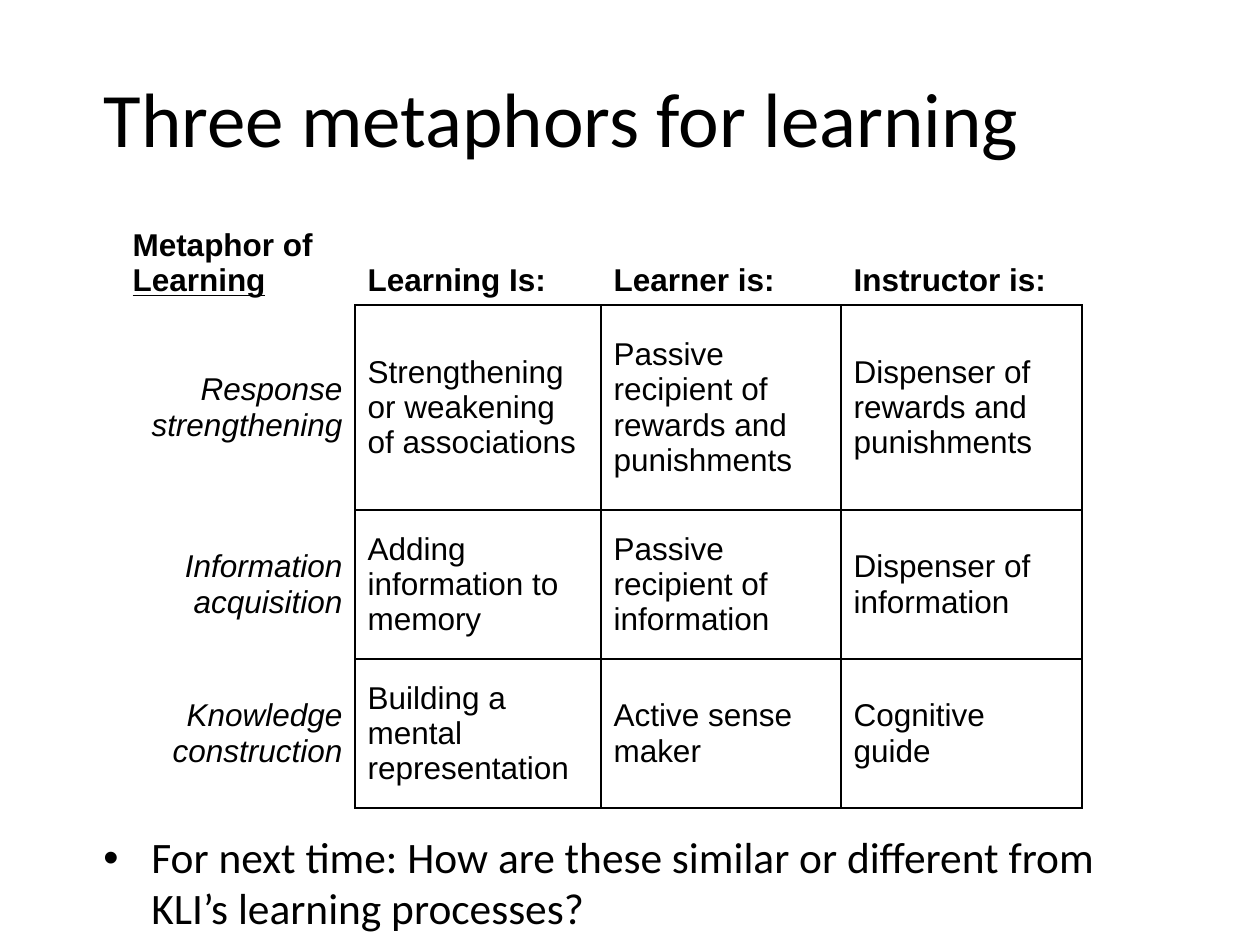
"""Build a slide with a table of three metaphors for learning and a closing question."""
import lxml.etree
import pptx
import pptx.dml.color
import pptx.enum.text
import pptx.oxml.ns
import pptx.util

PX = 914400 / 126
COLORS = {"ink": "000000"}
COLUMN_WIDTHS = [235, 246, 240, 241]
ROW_HEIGHTS = [134, 205, 149, 149]
ROWS = [
    ["Metaphor of ", "Learning Is:", "Learner is:", "Instructor is:"],
    ["Response strengthening", "Strengthening or weakening of associations",
     "Passive recipient of rewards and punishments", "Dispenser of rewards and punishments"],
    ["Information acquisition", "Adding information to memory",
     "Passive recipient of information", "Dispenser of information"],
    ["Knowledge construction", "Building a mental representation",
     "Active sense maker", "Cognitive guide"],
]
ANCHOR = pptx.enum.text.MSO_ANCHOR
ALIGN = pptx.enum.text.PP_ALIGN
qn = pptx.oxml.ns.qn


def px(*lengths):
    return [pptx.util.Emu(round(length * PX)) for length in lengths]


def format_span(span, font, size, bold=False, italic=False):
    span.font.name = font
    span.font.size = pptx.util.Pt(size)
    span.font.bold = bold
    span.font.italic = italic
    span.font.color.rgb = pptx.dml.color.RGBColor.from_string(COLORS["ink"])


deck = pptx.Presentation()
deck.slide_width, deck.slide_height = px(1260, 945)
page = deck.slides.add_slide(deck.slide_layouts[5])

frame = page.shapes.add_table(4, 4, *px(120, 171, sum(COLUMN_WIDTHS), sum(ROW_HEIGHTS)))
table = frame.table
table.first_row = False
table.horz_banding = False
style = frame._element.find(".//" + qn("a:tableStyleId"))
style.text = "{2D5ABB26-0587-4C30-8999-92F81FD0307C}"
for column, width in zip(table.columns, px(*COLUMN_WIDTHS)):
    column.width = width
for row, height in zip(table.rows, px(*ROW_HEIGHTS)):
    row.height = height

for row_index, texts in enumerate(ROWS):
    for column_index, text in enumerate(texts):
        cell = table.cell(row_index, column_index)
        header, label = row_index == 0, column_index == 0
        cell.vertical_anchor = ANCHOR.BOTTOM if header else ANCHOR.MIDDLE
        cell.text_frame.text = text
        para = cell.text_frame.paragraphs[0]
        para.alignment = ALIGN.RIGHT if label and not header else ALIGN.LEFT
        if header and label:
            underlined = para.add_run()
            underlined.text = "Learning"
            underlined.font.underline = True
        for span in para.runs:
            format_span(span, "Arial", 18, bold=header, italic=label and not header)

        if header:
            sides = "" if label else "B"
        else:
            sides = "R" if label else "LRTB"
        properties = cell._tc.get_or_add_tcPr()
        for side in sides:
            line = lxml.etree.SubElement(properties, qn("a:ln" + side), w="12700")
            fill = lxml.etree.SubElement(line, qn("a:solidFill"))
            lxml.etree.SubElement(fill, qn("a:srgbClr"), val=COLORS["ink"])
        cell.fill.background()

title = page.shapes.title
title.left, title.top, title.width, title.height = px(91, 38, 1094, 157)
title.text_frame.text = "Three metaphors for learning"
title.text_frame.vertical_anchor = ANCHOR.MIDDLE
title.text_frame.paragraphs[0].alignment = ALIGN.LEFT
format_span(title.text_frame.paragraphs[0].runs[0], "Calibri", 44)

box = page.shapes.add_textbox(*px(91, 827, 1094, 102))
box.text_frame.word_wrap = True
box.text_frame.text = "For next time: How are these similar or different from KLI’s learning processes?"
para = box.text_frame.paragraphs[0]
para.line_spacing = 0.97
format_span(para.runs[0], "Calibri", 24.8)
indent = px(48)[0]
properties = para._p.get_or_add_pPr()
properties.set("marL", str(indent))
properties.set("indent", str(-indent))
lxml.etree.SubElement(properties, qn("a:buFont"), typeface="Arial")
lxml.etree.SubElement(properties, qn("a:buChar"), char="•")

deck.save("out.pptx")
